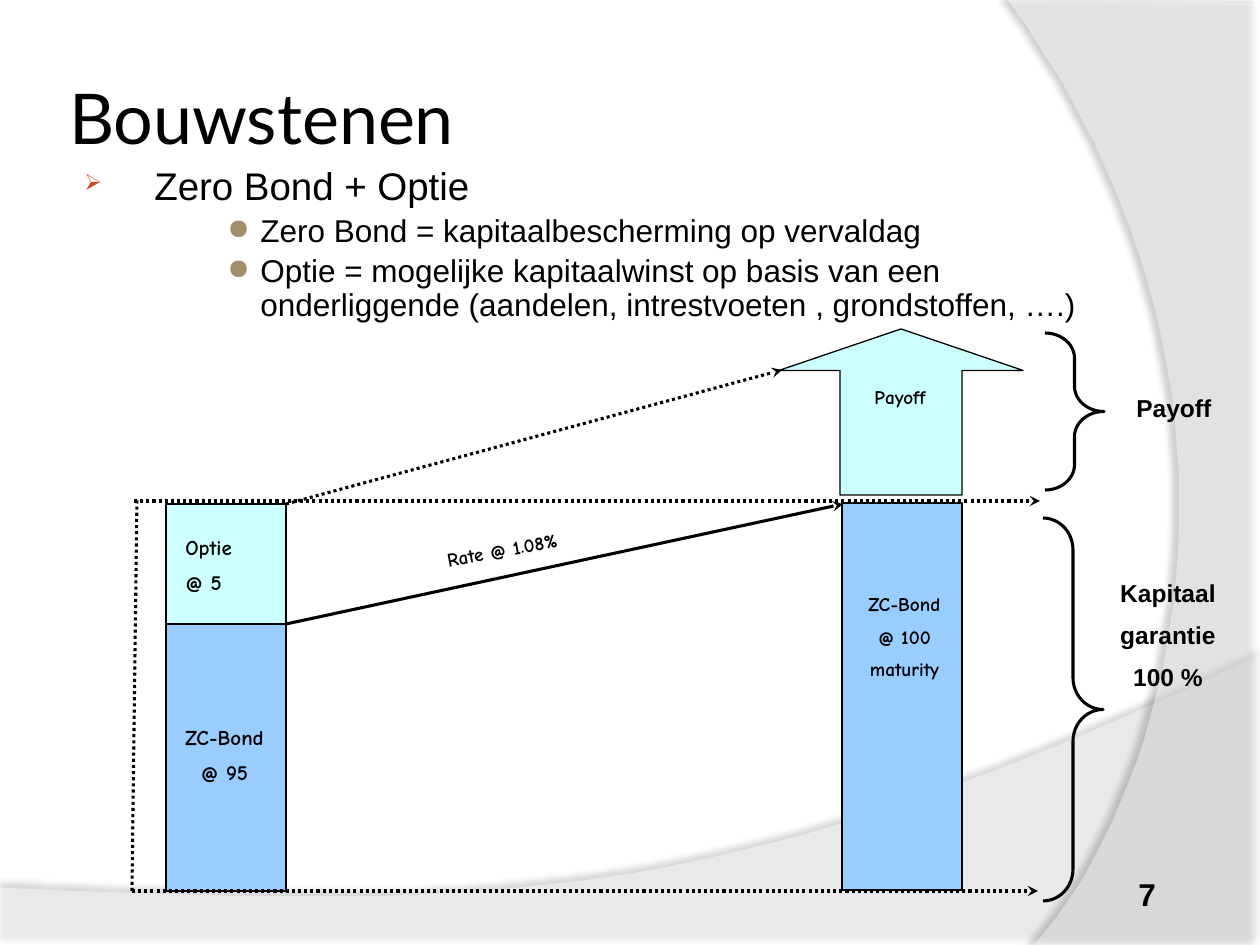
from lxml.etree import SubElement
from pptx import Presentation
from pptx.dml.color import RGBColor
from pptx.enum.dml import MSO_LINE
from pptx.enum.shapes import MSO_CONNECTOR, MSO_SHAPE
from pptx.enum.text import MSO_ANCHOR, PP_ALIGN
from pptx.oxml.ns import qn
from pptx.util import Pt

SCALE = 914400 / 126
BLACK = RGBColor(0x00, 0x00, 0x00)
WHITE = RGBColor(0xFF, 0xFF, 0xFF)
BOND_BLUE = RGBColor(0x99, 0xCC, 0xFF)
OPTION_CYAN = RGBColor(0xCC, 0xFF, 0xFF)
ARROW_BULLET = RGBColor(0xD3, 0x48, 0x17)
DOT_BULLET = RGBColor(0xA2, 0x8E, 0x6A)
COMIC = {"name": "Comic Neue", "bold": True}
ARIAL = {"name": "Arial", "bold": True}


def px(length):
    """Turn px into EMU."""
    return round(length * SCALE)


def place(box, left, top, width, height):
    """Return EMU bounds of a part positioned relative to its region."""
    return [px(v) for v in (box[0] + left, box[1] + top, width, height)]


def apply_format(target, values):
    """Set each attribute named in a dict of format values."""
    for key, value in values.items():
        setattr(target, key, value)


def write(paragraph, words, size, face):
    """Add one formatted black run to a paragraph."""
    run = paragraph.add_run()
    run.text = words
    apply_format(run.font, {"size": Pt(size), **face})
    run.font.color.rgb = BLACK


def add_label(slide, bounds, lines, size, face, align=PP_ALIGN.CENTER):
    """Add a text box with half a line of space between its paragraphs."""
    label = slide.shapes.add_textbox(*bounds)
    frame = label.text_frame
    frame.word_wrap = True
    for index, words in enumerate(lines):
        paragraph = frame.add_paragraph() if index else frame.paragraphs[0]
        paragraph.alignment = align
        paragraph.space_before = Pt(size / 2 if index else 0)
        write(paragraph, words, size, face)
    return label


def add_block(slide, kind, bounds, fill=None, weight=0.75, adjustments=()):
    """Add a black-outlined preset shape."""
    block = slide.shapes.add_shape(kind, *bounds)
    block.shadow.inherit = False
    for index, value in enumerate(adjustments):
        block.adjustments[index] = value
    if fill is None:
        block.fill.background()
    else:
        block.fill.solid()
        block.fill.fore_color.rgb = fill
    block.line.color.rgb = BLACK
    block.line.width = Pt(weight)


def add_line(slide, box, start, end, dotted=True, arrow=True):
    """Add a black line between two points of a region."""
    ends = [px(box[i] + point[i]) for point in (start, end) for i in (0, 1)]
    line = slide.shapes.add_connector(MSO_CONNECTOR.STRAIGHT, *ends)
    line.line.color.rgb = BLACK
    line.line.width = Pt(1.75)
    if dotted:
        line.line.dash_style = MSO_LINE.ROUND_DOT
    properties = line._element.spPr
    if arrow:
        SubElement(properties.find(qn("a:ln")), qn("a:tailEnd"), type="stealth")
    SubElement(properties, qn("a:effectLst"))


def bezier(p0, p1, p2, p3, steps=40):
    """Return points along a cubic curve."""
    weights = [((1 - t) ** 3, 3 * t * (1 - t) ** 2, 3 * t * t * (1 - t), t ** 3)
               for t in (n / steps for n in range(steps + 1))]
    return [tuple(sum(w * p[axis] for w, p in zip(row, (p0, p1, p2, p3)))
                  for axis in (0, 1)) for row in weights]


def add_swoosh(slide, box, corners, curve, opacity, shadow):
    """Add a translucent white backdrop area with a curved edge and a shadow."""
    points = [(box[0] + x, box[1] + y) for x, y in corners + bezier(*curve)]
    builder = slide.shapes.build_freeform(*points[0], scale=SCALE)
    builder.add_line_segments(points[1:], close=True)
    swoosh = builder.convert_to_shape()
    swoosh.fill.solid()
    swoosh.fill.fore_color.rgb = WHITE
    swoosh.line.fill.background()
    swoosh.shadow.inherit = False
    properties = swoosh._element.spPr
    color = properties.find(qn("a:solidFill")).find(qn("a:srgbClr"))
    SubElement(color, qn("a:alpha"), val=str(opacity * 1000))
    shade, distance, angle = shadow
    outer = SubElement(properties.find(qn("a:effectLst")), qn("a:outerShdw"),
                       blurRad=str(Pt(4)), dist=str(Pt(distance)),
                       dir=str(angle * 60000), algn="ctr", rotWithShape="0")
    black = SubElement(outer, qn("a:srgbClr"), val=str(BLACK))
    SubElement(black, qn("a:alpha"), val=str(shade * 1000))


def add_backdrop(slide, box):
    """Add the bottom wave and the right-hand arc."""
    add_swoosh(slide, box, [(0, 888), (0, 946), (1260, 946)],
               [(1260, 655), (704, 919), (493, 906), (0, 888)], 45, (35, 3.5, 270))
    add_swoosh(slide, box, [(1260, 3), (1260, 945)],
               [(1034, 945), (1178, 780), (1283, 378), (1008, 0)], 40, (45, 4, 180))


def add_heading(slide, box):
    """Move and format the title placeholder."""
    title = slide.shapes.title
    bounds = place(box, 0, 0, *box[2:])
    apply_format(title, dict(zip(("left", "top", "width", "height"), bounds)))
    sides = ("left", "top", "right", "bottom")
    apply_format(title.text_frame, {f"margin_{side}": px(6) for side in sides})
    title.text_frame.vertical_anchor = MSO_ANCHOR.MIDDLE
    paragraph = title.text_frame.paragraphs[0]
    paragraph.alignment = PP_ALIGN.LEFT
    write(paragraph, "Bouwstenen", 40, {"name": "Lato"})


def add_bullets(slide, box):
    """Add the bulleted explanation."""
    frame = slide.shapes.add_textbox(*place(box, 0, 0, *box[2:])).text_frame
    frame.word_wrap = True
    top = (0, 70, 70, "➢", ARROW_BULLET, 58, 22)
    detail = (3, 176, 33, "●", DOT_BULLET, 90, 18)
    items = [
        ("Zero Bond + Optie", top),
        ("Zero Bond = kapitaalbescherming op vervaldag", detail),
        ("Optie = mogelijke kapitaalwinst op basis van een onderliggende "
         "(aandelen, intrestvoeten , grondstoffen, ….)", detail),
    ]
    for index, (words, style) in enumerate(items):
        level, margin, hanging, mark, color, percent, size = style
        paragraph = frame.add_paragraph() if index else frame.paragraphs[0]
        properties = paragraph._p.get_or_add_pPr()
        properties.set("marL", str(px(margin)))
        properties.set("indent", str(-px(hanging)))
        tint = SubElement(properties, qn("a:buClr"))
        SubElement(tint, qn("a:srgbClr"), val=str(color))
        SubElement(properties, qn("a:buSzPct"), val=str(percent * 1000))
        SubElement(properties, qn("a:buChar"), char=mark)
        apply_format(paragraph, {"level": level, "line_spacing": 0.9,
                                 "space_before": Pt(size / 5 if index else 0)})
        write(paragraph, words, size, {"name": "Arial"})


def add_guides(slide, box):
    """Add the dotted frame and the two growth arrows."""
    add_line(slide, box, (0, 393), (906, 393))
    add_line(slide, box, (2, 3), (908, 3))
    add_line(slide, box, (0, 393), (5, 0), arrow=False)
    add_line(slide, box, (154, 126), (711, 6), dotted=False)
    add_line(slide, box, (154, 6), (650, -128))
    rate = add_label(slide, place(box, 240, 34, 260, 35), ["Rate @ 1.08%"], 11, COMIC)
    rate.rotation = 349


def add_start_column(slide, box):
    """Add the option stacked on the zero-coupon bond at the start."""
    width, height = box[2:]
    option = 120
    add_block(slide, MSO_SHAPE.RECTANGLE,
              place(box, 0, option, width, height - option), BOND_BLUE)
    add_block(slide, MSO_SHAPE.RECTANGLE, place(box, 0, 0, width, option), OPTION_CYAN)
    add_label(slide, place(box, 7, 24, 113, 76), ["Optie", "@ 5"], 12, COMIC, PP_ALIGN.LEFT)
    add_label(slide, place(box, 2, 214, 113, 76), ["ZC-Bond", "@ 95"], 12, COMIC)


def add_maturity_column(slide, box):
    """Add the payoff arrow above the matured bond."""
    add_block(slide, MSO_SHAPE.RECTANGLE, place(box, 63, 174, 120, 387), BOND_BLUE)
    add_block(slide, MSO_SHAPE.UP_ARROW, place(box, 0, 0, box[2], 166),
              OPTION_CYAN, adjustments=(0.5, 0.25))
    add_label(slide, place(box, 83, 50, 93, 35), ["Payoff"], 11, COMIC, PP_ALIGN.LEFT)
    add_label(slide, place(box, 58, 257, 135, 106),
              ["ZC-Bond", "@ 100", "maturity"], 11, COMIC)


def add_outcome(slide, box):
    """Add the braces with their outcome labels."""
    for bounds, bend in (((2, 0, 59, 157), 0.426), ((0, 185, 60, 383), 0.53)):
        add_block(slide, MSO_SHAPE.RIGHT_BRACE, place(box, *bounds),
                  weight=1.75, adjustments=(bend, 0.5))
    add_label(slide, place(box, 81, 54, 113, 42), ["Payoff"], 14, ARIAL, PP_ALIGN.LEFT)
    add_label(slide, place(box, 53, 239, 144, 131),
              ["Kapitaal", "garantie", "100 %"], 14, ARIAL)


def main():
    """Build and save the slide."""
    deck = Presentation()
    deck.slide_width, deck.slide_height = px(1260), px(945)
    slide = deck.slides.add_slide(deck.slide_layouts[5])
    add_backdrop(slide, (0, 0, 1260, 945))
    add_heading(slide, (63, 38, 1029, 157))
    add_label(slide, place((1126, 869), 0, 0, 105, 50), ["7"], 18, ARIAL, PP_ALIGN.LEFT)
    add_bullets(slide, (72, 161, 1052, 173))
    add_start_column(slide, (166, 504, 120, 387))
    add_maturity_column(slide, (779, 329, 244, 561))
    add_guides(slide, (132, 498, 908, 393))
    add_outcome(slide, (1043, 333, 197, 568))
    deck.save("out.pptx")


if __name__ == "__main__":
    main()
